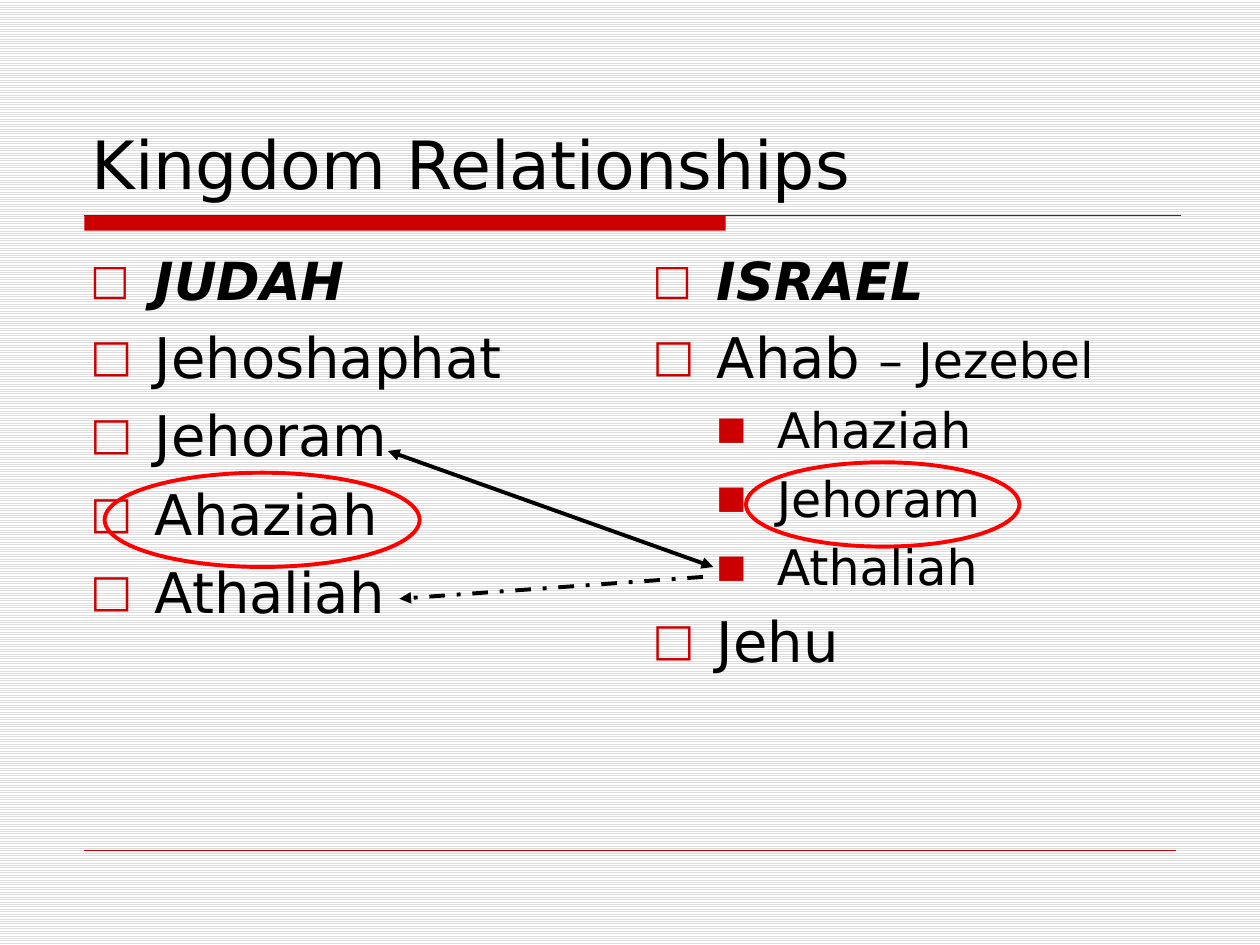
from lxml import etree
from pptx import Presentation
from pptx import util as u
from pptx.dml.color import RGBColor
from pptx.enum import dml, shapes, text
from pptx.oxml import ns

FONT = "DejaVu Sans"
COLORS = {
    "text": "000000",
    "accent": "CC0000",
    "rule": "333333",
    "ring": "FF0000",
    "stripe": "DDDDDD",
    "paper": "FFFFFF",
}
RGB = {name: RGBColor.from_string(value) for name, value in COLORS.items()}

deck = Presentation()
deck.slide_width, deck.slide_height = u.Cm(25.4), u.Cm(19.05)
page = deck.slides.add_slide(deck.slide_layouts[6])
backdrop = page.background.fill
backdrop.patterned()
backdrop.pattern = dml.MSO_PATTERN.LIGHT_HORIZONTAL
backdrop.fore_color.rgb = RGB["stripe"]
backdrop.back_color.rgb = RGB["paper"]


def add_text(left, top, width, height, anchor, paragraphs):
    box = page.shapes.add_textbox(u.Cm(left), u.Cm(top), u.Cm(width), u.Cm(height))
    frame = box.text_frame
    frame.word_wrap = True
    frame.vertical_anchor = anchor
    for index, (level, spans) in enumerate(paragraphs):
        para = frame.paragraphs[0] if index == 0 else frame.add_paragraph()
        if level is not None:
            indent, hanging, mark, size = BULLETS[level]
            para.level = level
            props = para._p.get_or_add_pPr()
            props.set("marL", str(u.Cm(indent)))
            props.set("indent", str(-u.Cm(hanging)))
            before = etree.SubElement(props, ns.qn("a:spcBef"))
            etree.SubElement(before, ns.qn("a:spcPct"), val="20000")
            tint = etree.SubElement(props, ns.qn("a:buClr"))
            etree.SubElement(tint, ns.qn("a:srgbClr"), val=COLORS["accent"])
            etree.SubElement(props, ns.qn("a:buSzPct"), val=size)
            etree.SubElement(props, ns.qn("a:buFont"), typeface=FONT)
            etree.SubElement(props, ns.qn("a:buChar"), char=mark)
        for words, points, strong in spans:
            span = para.add_run()
            span.text = words
            span.font.name = FONT
            span.font.size = u.Pt(points)
            span.font.bold = span.font.italic = strong
            span.font.color.rgb = RGB["text"]


def add_line(x1, y1, x2, y2, color, weight, dash=None, arrows=()):
    line = page.shapes.add_connector(
        shapes.MSO_CONNECTOR.STRAIGHT, u.Cm(x1), u.Cm(y1), u.Cm(x2), u.Cm(y2)
    )
    line.line.color.rgb = RGB[color]
    line.line.width = u.Pt(weight)
    if dash:
        line.line.dash_style = dash
    stroke = line.line._get_or_add_ln()
    for end in arrows:
        etree.SubElement(stroke, ns.qn(f"a:{end}"), type="triangle")
    etree.SubElement(line._element.spPr, ns.qn("a:effectLst"))


BULLETS = [(1.3, 1.3, "□", "80000"), (2.51, 1.22, "■", "65000")]

bar = page.shapes.add_shape(
    shapes.MSO_SHAPE.RECTANGLE, u.Cm(1.7), u.Cm(4.34), u.Cm(12.93), u.Cm(0.31)
)
bar.shadow.inherit = False
bar.fill.solid()
bar.fill.fore_color.rgb = RGB["accent"]
bar.line.fill.background()
add_line(1.7, 4.34, 23.8, 4.34, "rule", 0.75)
add_line(1.7, 17.15, 23.7, 17.15, "accent", 0.25)

add_text(1.6, 0.84, 22.23, 3.38, text.MSO_ANCHOR.BOTTOM,
         [(None, [("Kingdom Relationships", 38, False)])])

judah = [(0, [("JUDAH", 30, True)])]
for king in ("Jehoshaphat", "Jehoram", "Ahaziah", "Athaliah"):
    judah.append((0, [(king, 32, False)]))

israel = [
    (0, [("ISRAEL", 30, True)]),
    (0, [("Ahab ", 32, False), ("– Jezebel", 28, False)]),
]
for child in ("Ahaziah", "Jehoram", "Athaliah"):
    israel.append((1, [(child, 28, False)]))
israel.append((0, [("Jehu", 32, False)]))

for left, kingdom in ((1.57, judah), (12.9, israel)):
    add_text(left, 4.88, 10.9, 11.86, text.MSO_ANCHOR.TOP, kingdom)

add_line(7.82, 9.09, 14.38, 11.43, "text", 2.25, arrows=("headEnd", "tailEnd"))
add_line(14.17, 11.63, 8.05, 12.07, "text", 2.25,
         dash=dml.MSO_LINE.DASH_DOT, arrows=("tailEnd",))

for left, top, width, height in ((2.11, 9.53, 6.35, 1.9), (15.04, 9.32, 5.51, 1.7)):
    ring = page.shapes.add_shape(
        shapes.MSO_SHAPE.OVAL, u.Cm(left), u.Cm(top), u.Cm(width), u.Cm(height)
    )
    ring.shadow.inherit = False
    ring.fill.background()
    ring.line.color.rgb = RGB["ring"]
    ring.line.width = u.Pt(2.25)

deck.save("out.pptx")
